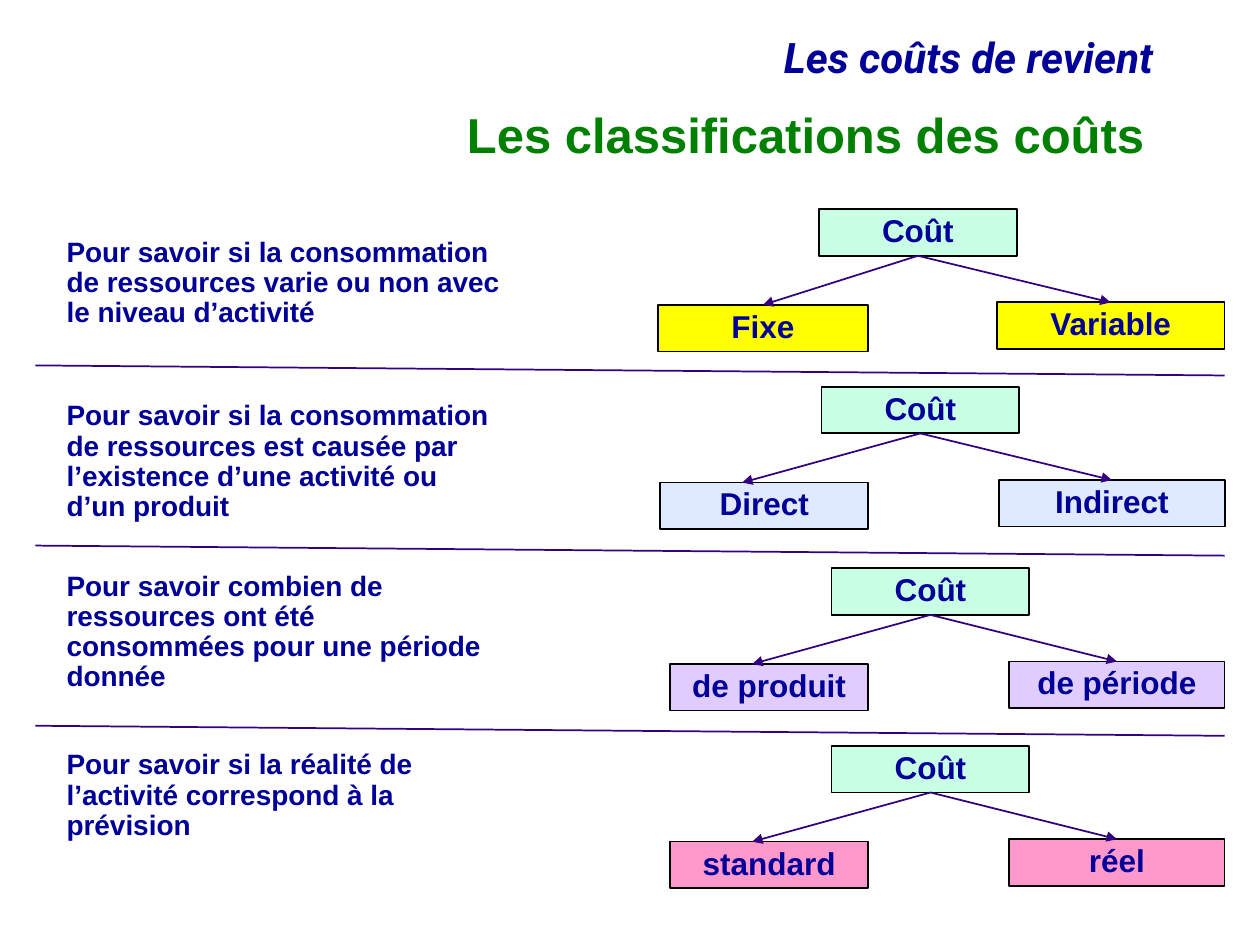
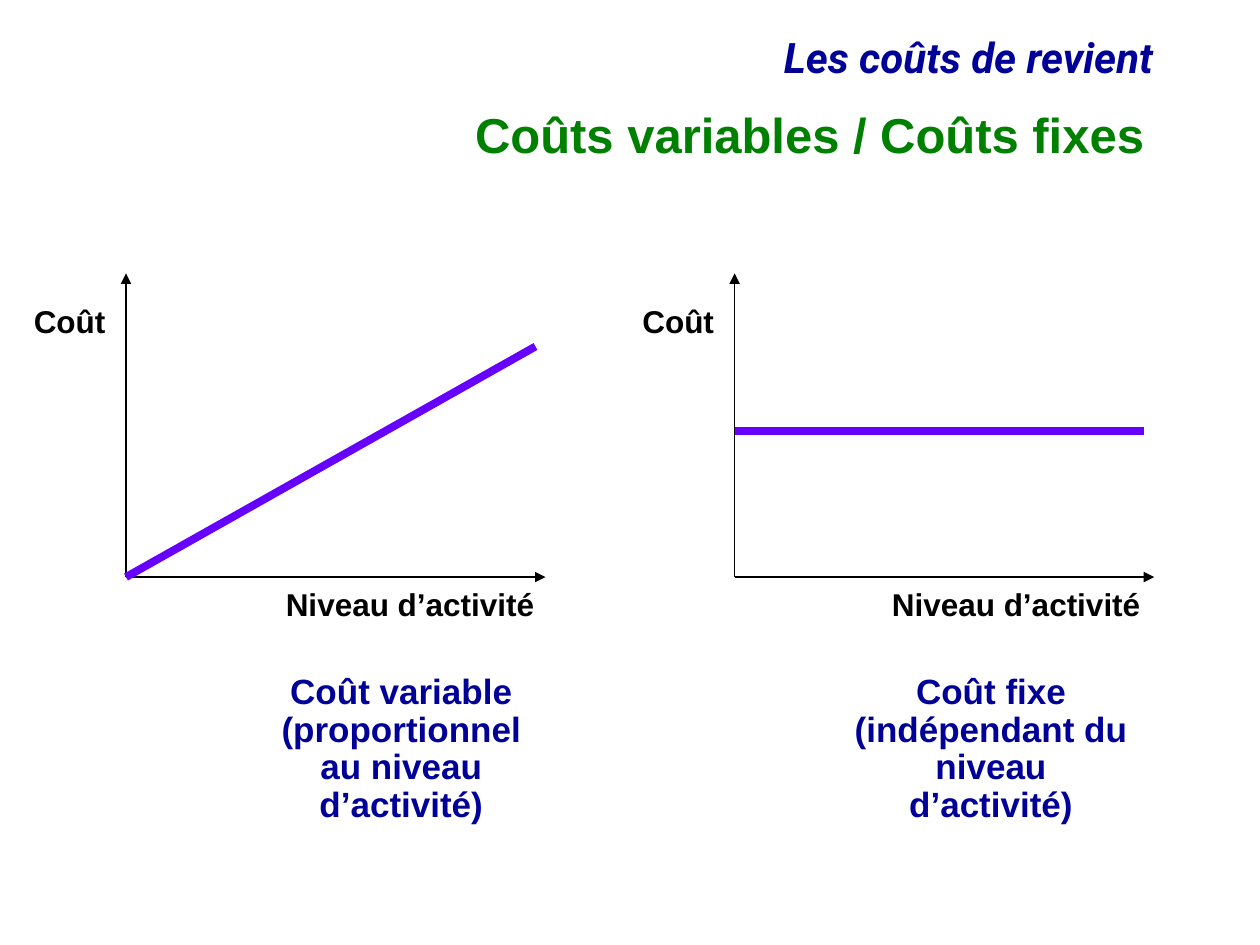
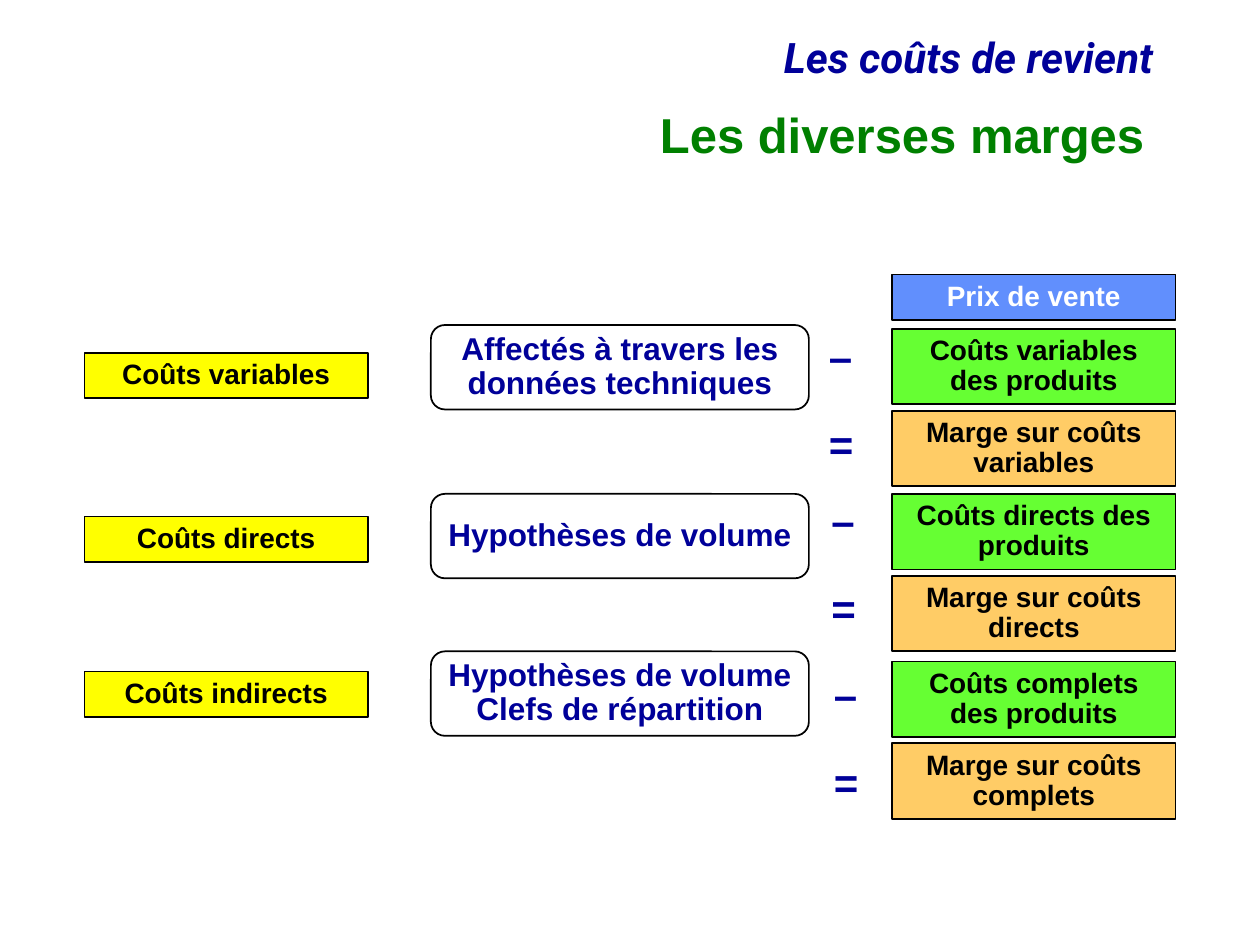
from dataclasses import dataclass
from typing import NamedTuple, Optional

from lxml.etree import SubElement
from pptx import Presentation
from pptx.dml.color import RGBColor as RGB
from pptx.enum.shapes import MSO_CONNECTOR as Link, MSO_SHAPE as Kind
from pptx.enum.text import MSO_ANCHOR as Anchor, MSO_AUTO_SIZE as Fit, PP_ALIGN as Align
from pptx.oxml.ns import qn
from pptx.util import Inches, Pt


@dataclass(frozen=True)
class Theme:
    font: str = "Arial"
    band_font: str = "Roboto"
    navy: str = "000099"
    green: str = "008000"
    black: str = "000000"
    white: str = "FFFFFF"
    purple: str = "330080"
    violet: str = "6600FF"
    mint: str = "C9FFE4"
    yellow: str = "FFFF00"
    sky: str = "DFE9FF"
    lilac: str = "E0CCFF"
    pink: str = "FF99CC"
    blue: str = "618FFD"
    lime: str = "66FF33"
    orange: str = "FFCC66"
    title: int = 28
    band: int = 24
    sign: int = 24
    caption: int = 20
    body: int = 18
    small: int = 16


T = Theme()


class Box(NamedTuple):
    x: float
    y: float
    w: float
    h: float


class Split(NamedTuple):
    """One cost divided in two, with the question it answers."""
    top: float
    shift: float
    left: str
    right: str
    fill: str
    note: str
    note_top: float
    note_wide: float = 3.62
    glued: bool = True


class Plot(NamedTuple):
    x: float
    end_y: float
    start_y: float
    label_x: float
    caption: str
    caption_x: float
    caption_wide: float


class Step(NamedTuple):
    """One cost level: its source, its method and its margin."""
    cost: str
    cost_top: float
    method: str
    method_top: float
    minus: str
    minus_top: float
    margin: str
    sign_x: float
    sign_top: float


SPLITS = [
    Split(1.66, 0, "Fixe", "Variable", T.yellow,
          "Pour savoir si la consommation de ressources varie ou non avec "
          "le niveau d’activité", 1.84, 3.78),
    Split(3.07, 0.02, "Direct", "Indirect", T.sky,
          "Pour savoir si la consommation de ressources est causée par "
          "l’existence d’une activité ou d’un produit", 3.14, glued=False),
    Split(4.51, 0.1, "de produit", "de période", T.lilac,
          "Pour savoir combien de ressources ont été consommées pour une "
          "période donnée", 4.49, glued=False),
    Split(5.92, 0.1, "standard", "réel", T.pink,
          "Pour savoir si la réalité de l’activité correspond à la "
          "prévision", 5.91, glued=False),
]
PLOTS = [
    Plot(1, 2.75, 4.58, 2.17,
         "Coût variable\n(proportionnel\vau niveau d’activité)", 1.76, 2.85),
    Plot(5.83, 3.42, 3.42, 6.98,
         "Coût fixe\n(indépendant du\vniveau d’activité)", 6.64, 2.45),
]
STEPS = [
    Step("Coûts variables", 2.8, "Affectés à travers les données techniques", 2.58,
         "Coûts variables des produits", 2.61, "Marge sur coûts variables", 6.48, 2.62),
    Step("Coûts directs", 4.1, "Hypothèses de volume", 3.92,
         "Coûts directs des produits", 3.92, "Marge sur coûts directs", 6.5, 3.92),
    Step("Coûts indirects", 5.33, "Hypothèses de volume\nClefs de répartition", 5.17,
         "Coûts complets des produits", 5.25, "Marge sur coûts complets", 6.52, 5.3),
]


def write(shape, text: str, *, size: int = T.body, color: str = T.navy,
          font: str = T.font, align=Align.LEFT, anchor=Anchor.TOP,
          wrap: bool = True, italic: bool = False) -> None:
    frame = shape.text_frame
    frame.text = text
    frame.word_wrap = wrap
    frame.auto_size = Fit.NONE
    frame.vertical_anchor = anchor
    for para in frame.paragraphs:
        para.alignment = align
        para.line_spacing = 0.9
        for run in para.runs:
            run.font.name, run.font.size = font, Pt(size)
            run.font.bold, run.font.italic = True, italic
            run.font.color.rgb = RGB.from_string(color)


def label(slide, box: Box, text: str, **style):
    shape = slide.shapes.add_textbox(*map(Inches, box))
    write(shape, text, **style)
    return shape


def block(slide, box: Box, text: str, fill: Optional[str] = None,
          kind=Kind.RECTANGLE, **style):
    """Outlined shape with centred text; no fill colour leaves it open."""
    shape = slide.shapes.add_shape(kind, *map(Inches, box))
    shape.shadow.inherit = False
    if fill:
        shape.fill.solid()
        shape.fill.fore_color.rgb = RGB.from_string(fill)
    else:
        shape.fill.background()
    shape.line.color.rgb = RGB.from_string(T.black)
    shape.line.width = Pt(1)
    write(shape, text, align=Align.CENTER, **style)
    return shape


def stroke(slide, x1: float, y1: float, x2: float, y2: float, *,
           color: str = T.purple, width: float = 1, arrow: bool = False):
    line = slide.shapes.add_connector(Link.STRAIGHT, *map(Inches, (x1, y1, x2, y2)))
    line.line.color.rgb = RGB.from_string(color)
    line.line.width = Pt(width)
    if arrow:
        SubElement(line.line._get_or_add_ln(), qn("a:tailEnd"), type="triangle")
    SubElement(line._element.spPr, qn("a:effectLst"))
    return line


def start(deck, title: str):
    """Add a slide with the shared band and title."""
    slide = deck.slides.add_slide(deck.slide_layouts[5])
    head = slide.shapes.title
    head.left, head.top, head.width, head.height = map(Inches, (1.26, 0.84, 7.92, 0.5))
    write(head, title, size=T.title, color=T.green, align=Align.RIGHT,
          anchor=Anchor.MIDDLE)
    label(slide, Box(1.25, 0.25, 8, 0.46), "Les coûts de revient", size=T.band,
          font=T.band_font, align=Align.RIGHT, italic=True)
    return slide


def draw_split(slide, row: Split) -> None:
    high, left_end, right_end = 0.37, 6.89, 9.72
    root_x, left_x, right_x = (x + row.shift for x in (6.5, 5.22, 7.91))
    left_y, right_y = row.top + 0.76, row.top + 0.74
    root = block(slide, Box(root_x, row.top, 1.57, high), "Coût", T.mint)
    left = block(slide, Box(left_x, left_y, left_end - left_x, high), row.left, row.fill)
    right = block(slide, Box(right_x, right_y, right_end - right_x, high),
                  row.right, row.fill)
    for leaf, tip_x, tip_y, glued in (
            (left, 5.87 + row.shift, left_y, row.glued),
            (right, right_x, right_y, True)):
        arm = stroke(slide, root_x, row.top + high, tip_x, tip_y, arrow=True)
        arm.begin_connect(root, 2)
        if glued:
            arm.end_connect(leaf, 0)
    label(slide, Box(0.43, row.note_top, row.note_wide, 1.07), row.note, size=T.small)


def draw_plot(slide, plot: Plot) -> None:
    base = 4.58
    for x, y in ((plot.x, 2.17), (plot.x + 3.33, base)):
        stroke(slide, plot.x, base, x, y, color=T.black, arrow=True)
    stroke(slide, plot.x, plot.start_y, plot.x + 3.25, plot.end_y,
           color=T.violet, width=4.5)
    label(slide, Box(plot.x - 0.83, 2.38, 0.77, 0.37), "Coût",
          color=T.black, wrap=False)
    label(slide, Box(plot.label_x, 4.63, 2.17, 0.37), "Niveau d’activité",
          color=T.black, wrap=False)
    label(slide, Box(plot.caption_x, 5.3, plot.caption_wide, 1.3), plot.caption,
          size=T.caption, align=Align.CENTER)


def draw_step(slide, step: Step) -> None:
    wide, sale_x = 2.25, 7.08
    for box, text, fill in (
            (Box(0.67, step.cost_top, wide, 0.36), step.cost, T.yellow),
            (Box(sale_x, step.minus_top, wide, 0.6), step.minus, T.lime),
            (Box(sale_x, step.minus_top + 0.65, wide, 0.6), step.margin, T.orange)):
        block(slide, box, text, fill, size=T.small, color=T.black, anchor=Anchor.MIDDLE)
    block(slide, Box(3.42, step.method_top, 3, 0.67), step.method,
          kind=Kind.ROUNDED_RECTANGLE, anchor=Anchor.MIDDLE)
    for i, sign in enumerate("–="):
        label(slide, Box(step.sign_x, step.sign_top + 0.7 * i, 0.4, 0.46), sign,
              size=T.sign, wrap=False)


def main() -> None:
    deck = Presentation()
    deck.slide_width, deck.slide_height = Inches(10), Inches(7.5)

    slide = start(deck, "Les classifications des coûts")
    for row in SPLITS:
        draw_split(slide, row)
    for i in range(len(SPLITS) - 1):
        y = 2.9 + 1.43 * i
        stroke(slide, 0.28, y, 9.72, y + 0.08)

    slide = start(deck, "Coûts variables / Coûts fixes")
    for plot in PLOTS:
        draw_plot(slide, plot)

    slide = start(deck, "Les diverses marges")
    block(slide, Box(7.08, 2.18, 2.25, 0.36), "Prix de vente", T.blue,
          size=T.small, color=T.white, anchor=Anchor.MIDDLE)
    for step in STEPS:
        draw_step(slide, step)

    deck.save("out.pptx")


if __name__ == "__main__":
    main()
